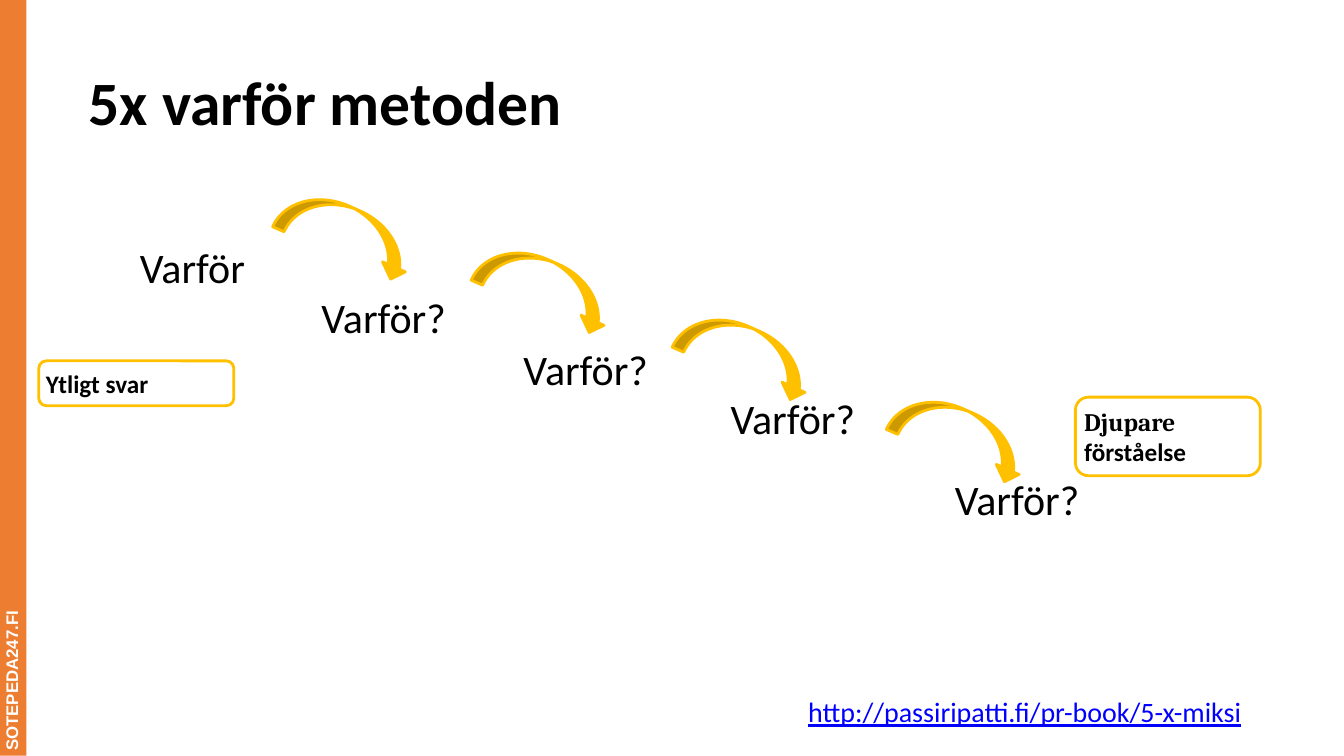
from dataclasses import dataclass

from pptx import Presentation
from pptx.dml.color import RGBColor
from pptx.enum.shapes import MSO_SHAPE as SHAPE
from pptx.enum.text import MSO_ANCHOR as ANCHOR, MSO_AUTO_SIZE as AUTO, PP_ALIGN as ALIGN
from pptx.util import Pt

PX = 9144  # EMU per px, 100 px to the inch
WIDTH, HEIGHT = 2667, 1500


@dataclass(frozen=True)
class Theme:
    accent: str = "FFC000"
    bar: str = "ED7D31"
    paper: str = "FFFFFF"
    ink: str = "000000"
    link: str = "0000FF"
    body_font: str = "Calibri"
    serif_font: str = "Cambria"
    bar_font: str = "Arial"
    title_size: int = 88
    step_size: int = 60
    link_size: int = 40
    label_size: int = 36
    bar_size: int = 24
    line_width: int = 4


THEME = Theme()


def px(*lengths):
    return [n * PX for n in lengths]


def style_run(r, size, color=THEME.ink, font=THEME.body_font, bold=False):
    r.font.name, r.font.size, r.font.bold = font, Pt(size), bold
    r.font.color.rgb = RGBColor.from_string(color)


def set_frame(tf, anchor=ANCHOR.TOP, wrap=True, inset=10):
    tf.word_wrap = wrap
    tf.vertical_anchor = anchor
    tf.margin_left = tf.margin_right = 10 * PX
    tf.margin_top = tf.margin_bottom = inset * PX


def add_filled(s, kind, box, fill, line=None):
    sp = s.shapes.add_shape(kind, *px(*box))
    sp.shadow.inherit = False
    sp.fill.solid()
    sp.fill.fore_color.rgb = RGBColor.from_string(fill)
    if line:
        sp.line.color.rgb = RGBColor.from_string(line)
        sp.line.width = Pt(THEME.line_width)
    else:
        sp.line.fill.background()
    return sp


def add_text(s, box, text, size, color=THEME.ink, inset=10):
    tf = s.shapes.add_textbox(*px(*box)).text_frame
    set_frame(tf, wrap=False, inset=inset)
    tf.auto_size = AUTO.SHAPE_TO_FIT_TEXT
    tf.text = text
    r = tf.paragraphs[0].runs[0]
    style_run(r, size, color)
    return r


def add_side_bar(s, box, text):
    """Fill the upright box with a bar whose text reads upwards."""
    x, y, w, h = box
    flat = (x + (w - h) // 2, y + (h - w) // 2, h, w)
    sp = add_filled(s, SHAPE.RECTANGLE, flat, THEME.bar)
    sp.rotation = 270
    tf = sp.text_frame
    set_frame(tf, ANCHOR.BOTTOM)
    tf.text = text
    p = tf.paragraphs[0]
    p.alignment = ALIGN.LEFT
    style_run(p.runs[0], THEME.bar_size, THEME.paper, THEME.bar_font, bold=True)


def set_title(s, box, text):
    title = s.shapes.title
    title.left, title.top, title.width, title.height = px(*box)
    tf = title.text_frame
    set_frame(tf, ANCHOR.MIDDLE)
    tf.text = text
    p = tf.paragraphs[0]
    p.alignment, p.line_spacing = ALIGN.LEFT, 0.9
    style_run(p.runs[0], THEME.title_size, bold=True)


def add_steps(s, box, steps, arrows):
    """Place the questions and the arrows between them, by offsets in the box."""
    x, y = box[:2]
    for dx, dy, w, text in steps:
        add_text(s, (x + dx, y + dy, w, 121), text, THEME.step_size)
    for dx, dy in arrows:
        sp = add_filled(s, SHAPE.CURVED_DOWN_ARROW, (x + dx, y + dy, 281, 99),
                        THEME.accent, THEME.accent)
        sp.rotation = 23.9


def add_label(s, box, parts):
    """Outlined label made of (text, font) runs."""
    tf = add_filled(s, SHAPE.ROUNDED_RECTANGLE, box, THEME.paper, THEME.accent).text_frame
    set_frame(tf, ANCHOR.MIDDLE)
    p = tf.paragraphs[0]
    p.alignment = ALIGN.LEFT
    for text, font in parts:
        r = p.add_run()
        r.text = text
        style_run(r, THEME.label_size, font=font, bold=True)


def main():
    prs = Presentation()
    prs.slide_width, prs.slide_height = px(WIDTH, HEIGHT)
    s = prs.slides.add_slide(prs.slide_layouts[5])

    add_side_bar(s, (-8, 0, 61, HEIGHT), "SOTEPEDA247.FI")
    set_title(s, (166, 104, 2431, 209), "5x varför metoden")
    r = add_text(s, (1594, 1373, 900, 77), "http://passiripatti.fi/pr-book/5-x-miksi",
                 THEME.link_size, THEME.link, inset=5)
    r.font.underline = True

    steps = [(0, 57, 237, "Varför")] + [
        (dx, dy, 276, "Varför?")
        for dx, dy in [(360, 156), (761, 259), (1172, 357), (1617, 517)]]
    arrows = [(281, 0), (675, 106), (1074, 239), (1499, 402)]
    add_steps(s, (268, 412, 1893, 638), steps, arrows)

    add_label(s, (77, 716, 387, 89), [("Ytligt svar", THEME.body_font)])
    add_label(s, (2134, 788, 367, 156),
              [("Djupare ", THEME.serif_font), ("förståelse", THEME.body_font)])
    prs.save("out.pptx")


if __name__ == "__main__":
    main()
